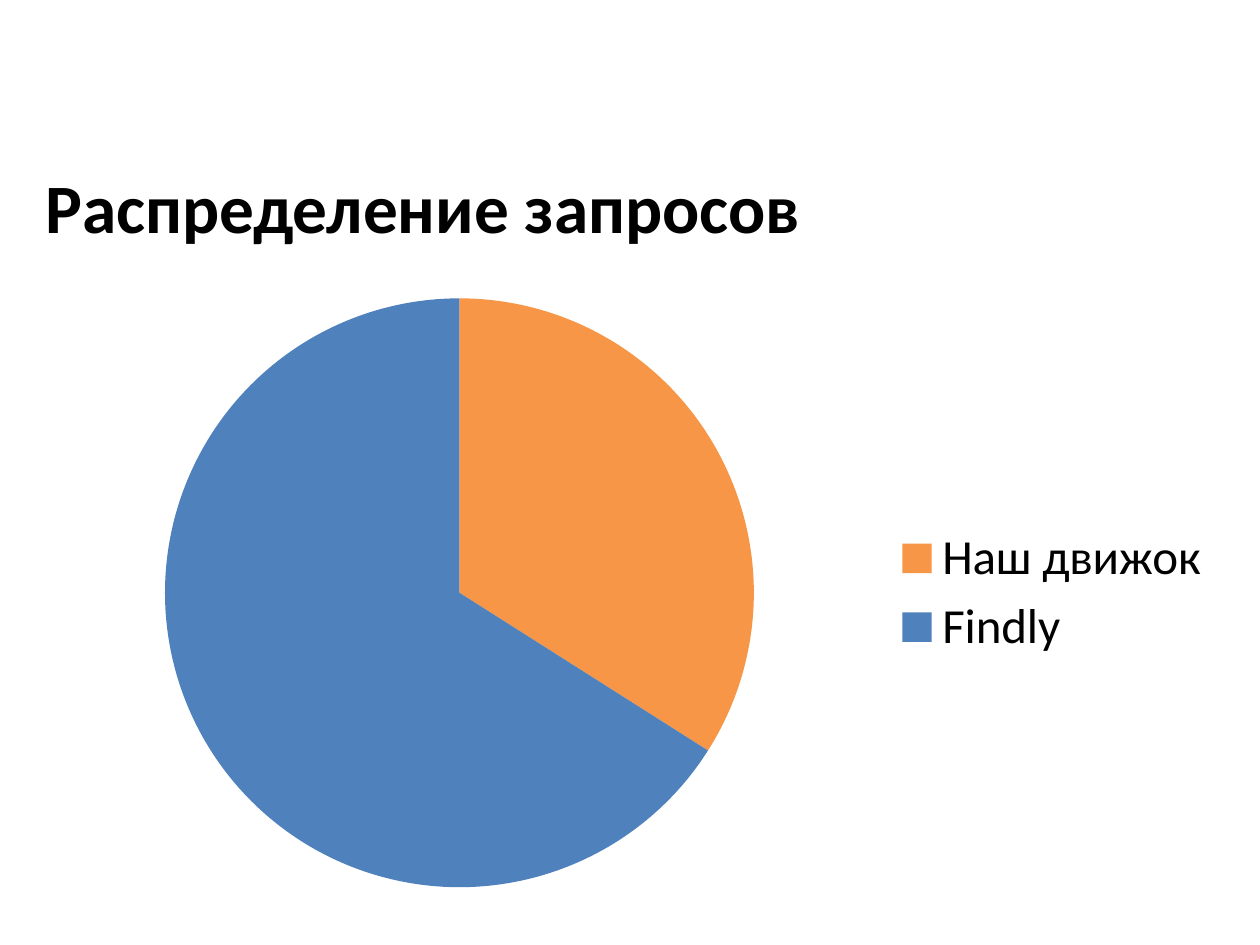
from dataclasses import dataclass

from pptx import Presentation, util as u
from pptx.chart import data as chart_data
from pptx.dml import color
from pptx.enum import chart as charts, text

COLORS = {"ink": "000000", "own": "F79646", "rival": "4F81BD", "paper": "FFFFFF"}
LEFT, WIDTH = u.Inches(0.26), u.Inches(9.48)


@dataclass(frozen=True)
class Share:
    engine: str
    percent: int
    color: str


SHARES = [Share("Наш движок", 34, "own"), Share("Findly", 66, "rival")]


def rgb(name: str) -> color.RGBColor:
    return color.RGBColor.from_string(COLORS[name])


def set_font(font, **values) -> None:
    for attribute, value in {"name": "Calibri", **values}.items():
        setattr(font, attribute, value)
    font.color.rgb = rgb("ink")


def add_heading(slide, wording: str) -> None:
    heading = slide.shapes.add_textbox(LEFT, u.Inches(1.26), WIDTH, u.Inches(0.74))
    frame = heading.text_frame
    frame.word_wrap = True
    frame.vertical_anchor = text.MSO_ANCHOR.MIDDLE
    run = frame.paragraphs[0].add_run()
    run.text = wording
    set_font(run.font, size=u.Pt(39.6), bold=True)


def add_query_pie(slide, shares: list[Share]) -> None:
    queries = chart_data.CategoryChartData()
    queries.categories = [share.engine for share in shares]
    queries.add_series("Series 1", [share.percent for share in shares])
    pie = slide.shapes.add_chart(
        charts.XL_CHART_TYPE.PIE, LEFT, u.Inches(2.23), WIDTH, u.Inches(4.95), queries
    ).chart
    set_font(pie.font, size=u.Pt(18))
    pie.has_title = False
    pie.has_legend = True
    legend_format = {
        "position": charts.XL_LEGEND_POSITION.RIGHT,
        "include_in_layout": False,
    }
    for attribute, value in legend_format.items():
        setattr(pie.legend, attribute, value)
    set_font(pie.legend.font, size=u.Pt(28))
    plot = pie.plots[0]
    plot.vary_by_categories = True
    for index, share in enumerate(shares):
        fill = plot.series[0].points[index].format.fill
        fill.solid()
        fill.fore_color.rgb = rgb(share.color)


def main() -> None:
    deck = Presentation()
    deck.slide_width, deck.slide_height = u.Inches(10), u.Inches(7.5)
    slide = deck.slides.add_slide(deck.slide_layouts[6])
    slide.background.fill.solid()
    slide.background.fill.fore_color.rgb = rgb("paper")
    add_heading(slide, "Распределение запросов")
    add_query_pie(slide, SHARES)
    deck.save("out.pptx")


if __name__ == "__main__":
    main()
